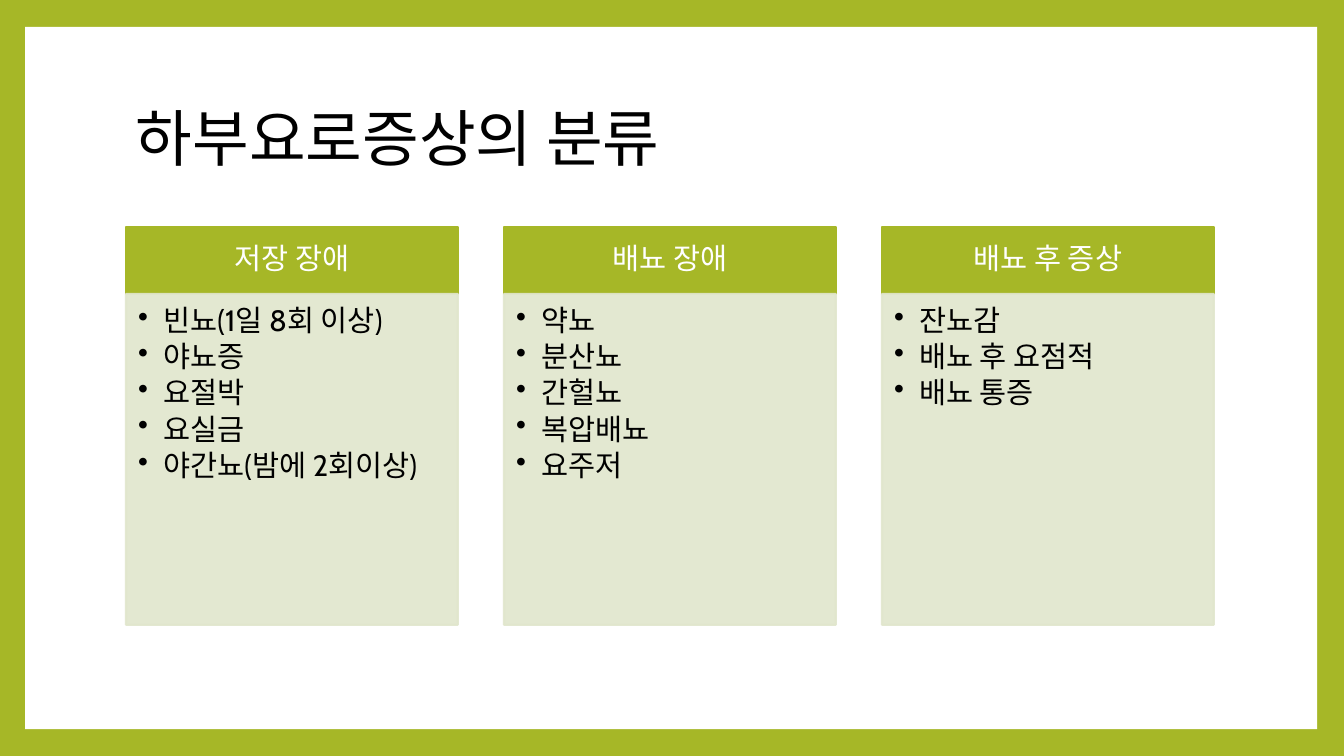
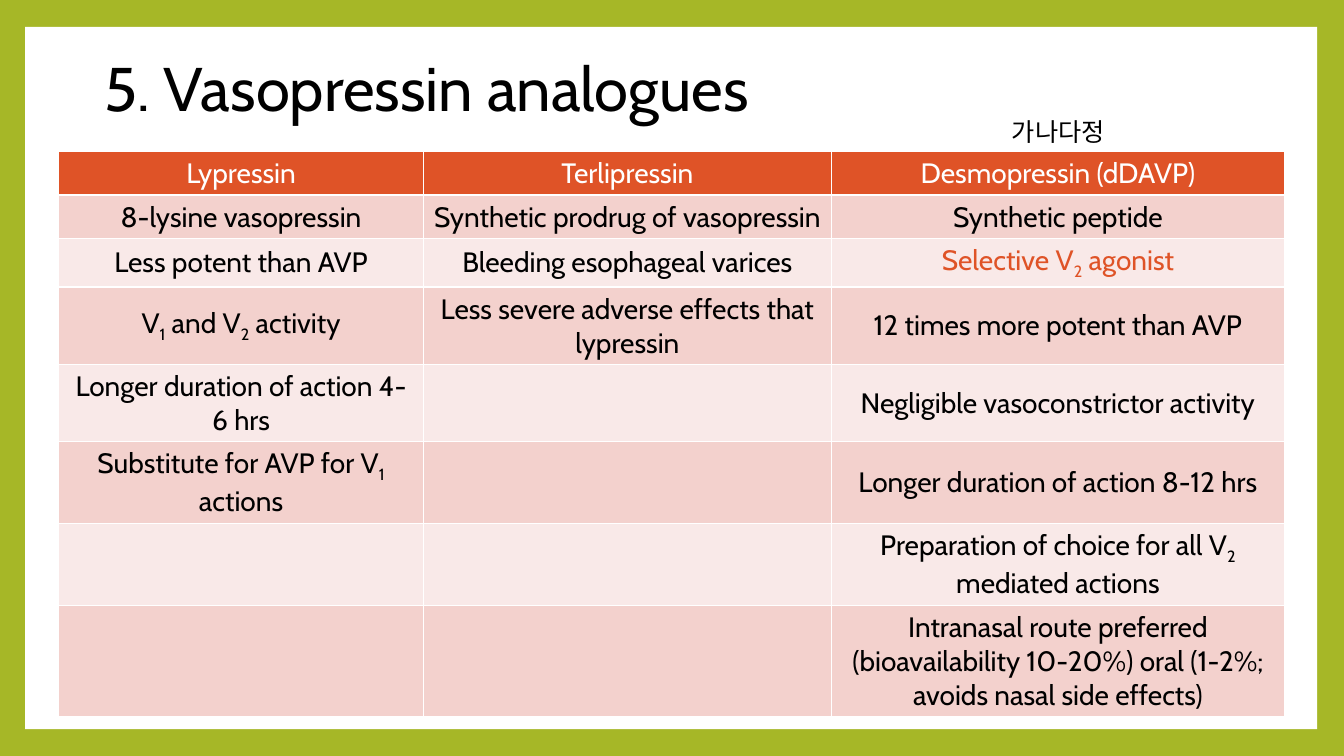
from lxml import etree
from pptx import Presentation
from pptx import util as u
from pptx.dml.color import RGBColor
from pptx.enum import shapes, text
from pptx.oxml import ns

GREEN = RGBColor(0xA6, 0xB7, 0x27)
PALE_GREEN = RGBColor(0xE1, 0xE6, 0xCD)
ORANGE = RGBColor(0xDF, 0x53, 0x27)
ROSE = RGBColor(0xF3, 0xD1, 0xCD)
PALE_ROSE = RGBColor(0xF9, 0xE9, 0xE8)
WHITE = RGBColor(0xFF, 0xFF, 0xFF)
BLACK = RGBColor(0x00, 0x00, 0x00)

FONT = "Cabin"
CENTER = text.PP_ALIGN.CENTER
MIDDLE = text.MSO_ANCHOR.MIDDLE

# The slide is a grid of 160 columns by 90 rows of equal squares
COLUMNS, ROWS = 160, 90
UNIT = u.Inches(7.5) / ROWS


def grid(*lengths):
    return [u.Emu(round(length * UNIT)) for length in lengths]


def add_element(parent, tag, **attributes):
    return etree.SubElement(parent, ns.qn(tag), attributes)


class Deck:
    """Holds the shared style and the current slide."""

    def __init__(self):
        self.presentation = Presentation()
        width, height = grid(COLUMNS, ROWS)
        self.presentation.slide_width = width
        self.presentation.slide_height = height
        self.slide = None

    def new_slide(self, title, left, top, width):
        layout = self.presentation.slide_layouts[6]
        self.slide = self.presentation.slides.add_slide(layout)
        background = self.slide.background.fill
        background.solid()
        background.fore_color.rgb = GREEN
        self.box(3, 3.2, 153.8, 83.6, WHITE)
        self.label(title, left, top, width, 17.75, 44, MIDDLE, 0.9)

    def style(self, paragraph, size, color, alignment=None, spacing=None):
        paragraph.font.name = FONT
        paragraph.font.size = u.Pt(size)
        paragraph.font.color.rgb = color
        paragraph.alignment = alignment
        paragraph.line_spacing = spacing

    def box(self, left, top, width, height, color, outlined=False, opacity=100):
        shape = self.slide.shapes.add_shape(
            shapes.MSO_SHAPE.RECTANGLE, *grid(left, top, width, height))
        shape.shadow.inherit = False
        shape.fill.solid()
        shape.fill.fore_color.rgb = color
        if outlined:
            shape.line.color.rgb = color
            shape.line.width = u.Pt(1.5)
        else:
            shape.line.fill.background()
        if opacity < 100:
            for tint in shape._element.spPr.iter(ns.qn("a:srgbClr")):
                add_element(tint, "a:alpha", val=str(opacity * 1000))
        return shape

    def label(self, words, left, top, width, height, size,
              anchor=text.MSO_ANCHOR.TOP, spacing=None):
        frame = self.slide.shapes.add_textbox(
            *grid(left, top, width, height)).text_frame
        frame.word_wrap = True
        frame.vertical_anchor = anchor
        frame.text = words
        self.style(frame.paragraphs[0], size, BLACK, spacing=spacing)

    def card(self, heading, items, left, top, width):
        header_height, body_height = 8, 39.4
        # Heading band
        header = self.box(left, top, width, header_height, GREEN, True)
        header.text_frame.text = heading
        self.style(header.text_frame.paragraphs[0], 21, WHITE, CENTER, 0.9)
        # Bulleted body
        body = self.box(left, top + header_height, width, body_height,
                        PALE_GREEN, True, 90)
        frame = body.text_frame
        frame.vertical_anchor = text.MSO_ANCHOR.TOP
        frame.margin_left = frame.margin_top = u.Inches(0.12)
        frame.margin_right = u.Inches(0.16)
        frame.text = "\n".join(items)
        for paragraph in frame.paragraphs:
            self.bullet(paragraph)

    def bullet(self, paragraph):
        self.style(paragraph, 21, BLACK, text.PP_ALIGN.LEFT, 0.9)
        paragraph.space_after = u.Pt(3.2)
        indent = u.Inches(0.25)
        properties = paragraph._p.get_or_add_pPr()
        properties.set("marL", str(indent))
        properties.set("indent", str(-indent))
        mark = etree.Element(ns.qn("a:buChar"), char="•")
        properties.find(ns.qn("a:defRPr")).addprevious(mark)

    def table(self, rows, left, top, widths, row_height, accents):
        table = self.slide.shapes.add_table(
            len(rows), len(widths),
            *grid(left, top, sum(widths), row_height * len(rows))).table
        for column, width in zip(table.columns, grid(*widths)):
            column.width = width
        for r, row in enumerate(rows):
            for c, words in enumerate(row):
                if r == 0:
                    fill, color = ORANGE, WHITE
                else:
                    fill = ROSE if r % 2 else PALE_ROSE
                    color = ORANGE if (r, c) in accents else BLACK
                self.cell(table.cell(r, c), words, fill, color)

    def cell(self, cell, words, fill, color):
        cell.vertical_anchor = MIDDLE
        paragraph = cell.text_frame.paragraphs[0]
        self.style(paragraph, 20, color, CENTER)
        # An underscore lowers the character after it
        first, *others = words.split("_")
        pieces = [(first, False)]
        for part in others:
            pieces += [(part[0], True), (part[1:], False)]
        for piece, lowered in pieces:
            if piece:
                run = paragraph.add_run()
                run.text = piece
                if lowered:
                    run._r.get_or_add_rPr().set("baseline", "-25000")
        # Borders go before the fill
        properties = cell._tc.get_or_add_tcPr()
        for side in ("a:lnL", "a:lnR", "a:lnT", "a:lnB"):
            line = add_element(properties, side, w=str(u.Pt(1)))
            add_element(add_element(line, "a:solidFill"), "a:srgbClr",
                        val=str(WHITE))
        cell.fill.solid()
        cell.fill.fore_color.rgb = fill


SYMPTOMS = {
    "저장 장애": ["빈뇨(1일 8회 이상)", "야뇨증", "요절박", "요실금",
              "야간뇨(밤에 2회이상)"],
    "배뇨 장애": ["약뇨", "분산뇨", "간헐뇨", "복압배뇨", "요주저"],
    "배뇨 후 증상": ["잔뇨감", "배뇨 후 요점적", "배뇨 통증"],
}

ANALOGUES = [
    ("Lypressin", "Terlipressin", "Desmopressin (dDAVP)"),
    ("8-lysine vasopressin", "Synthetic prodrug of vasopressin",
     "Synthetic peptide"),
    ("Less potent than AVP", "Bleeding esophageal varices",
     "Selective V_2 agonist"),
    ("V_1 and V_2 activity", "Less severe adverse effects that lypressin",
     "12 times more potent than AVP"),
    ("Longer duration of action 4-6 hrs", "",
     "Negligible vasoconstrictor activity"),
    ("Substitute for AVP for V_1 actions", "",
     "Longer duration of action 8-12 hrs"),
    ("", "", "Preparation of choice for all V_2 mediated actions"),
    ("", "", "Intranasal route preferred (bioavailability 10-20%) oral "
             "(1-2%; avoids nasal side effects)"),
]


def main():
    deck = Deck()

    # Symptom classes in three cards
    deck.new_slide("하부요로증상의 분류", 15, 8, 129.6)
    for index, (heading, items) in enumerate(SYMPTOMS.items()):
        deck.card(heading, items, 15 + 45 * index, 27, 39.5)

    # Comparison table
    deck.new_slide("5. Vasopressin analogues", 11.2, 2, 125.4)
    deck.table(ANALOGUES, 7, 18, (43.4, 48.6, 53.9), 4.92, {(2, 2)})
    deck.label("가나다정", 119.3, 13.2, 16.1, 4.8, 18)

    deck.presentation.save("out.pptx")


if __name__ == "__main__":
    main()
